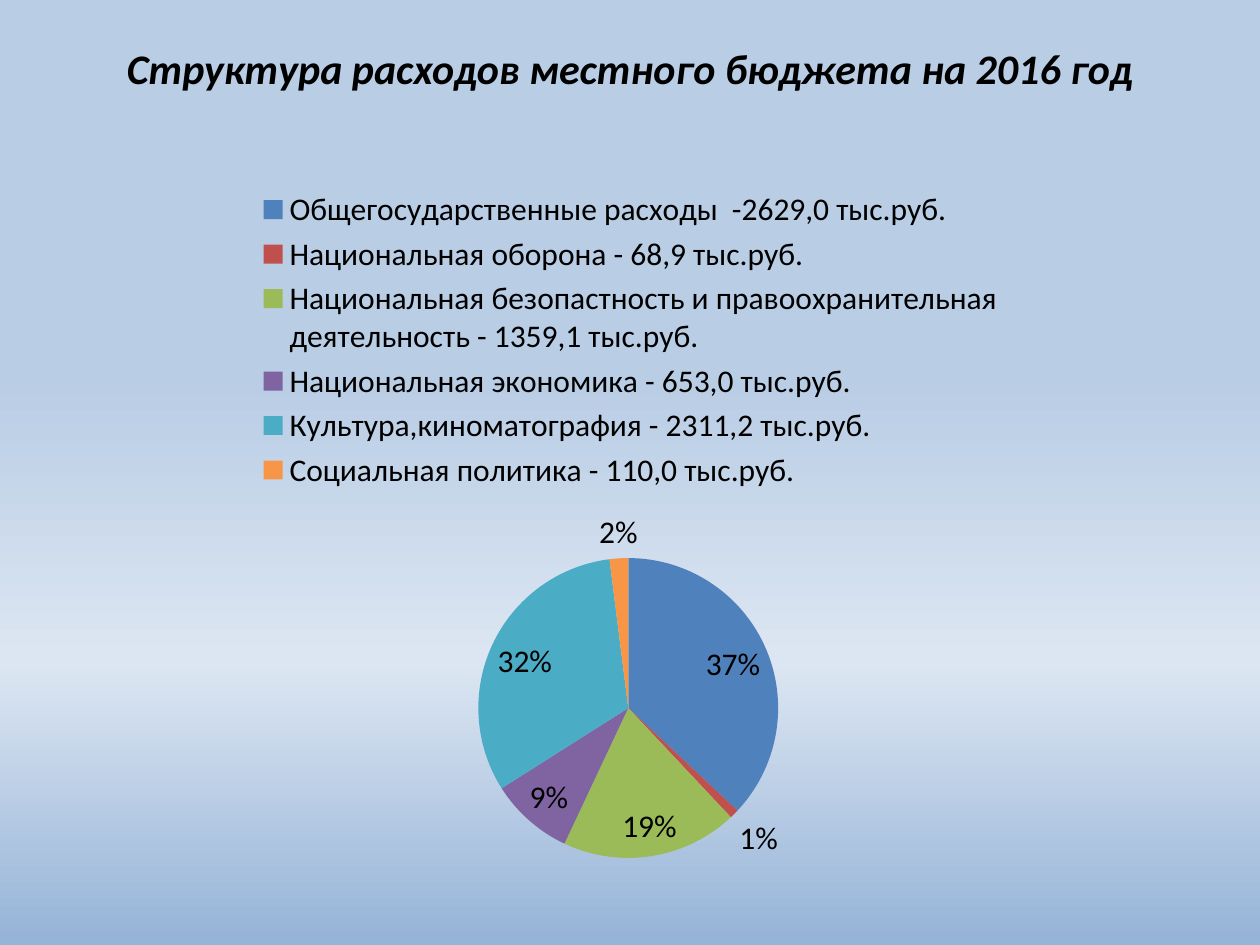
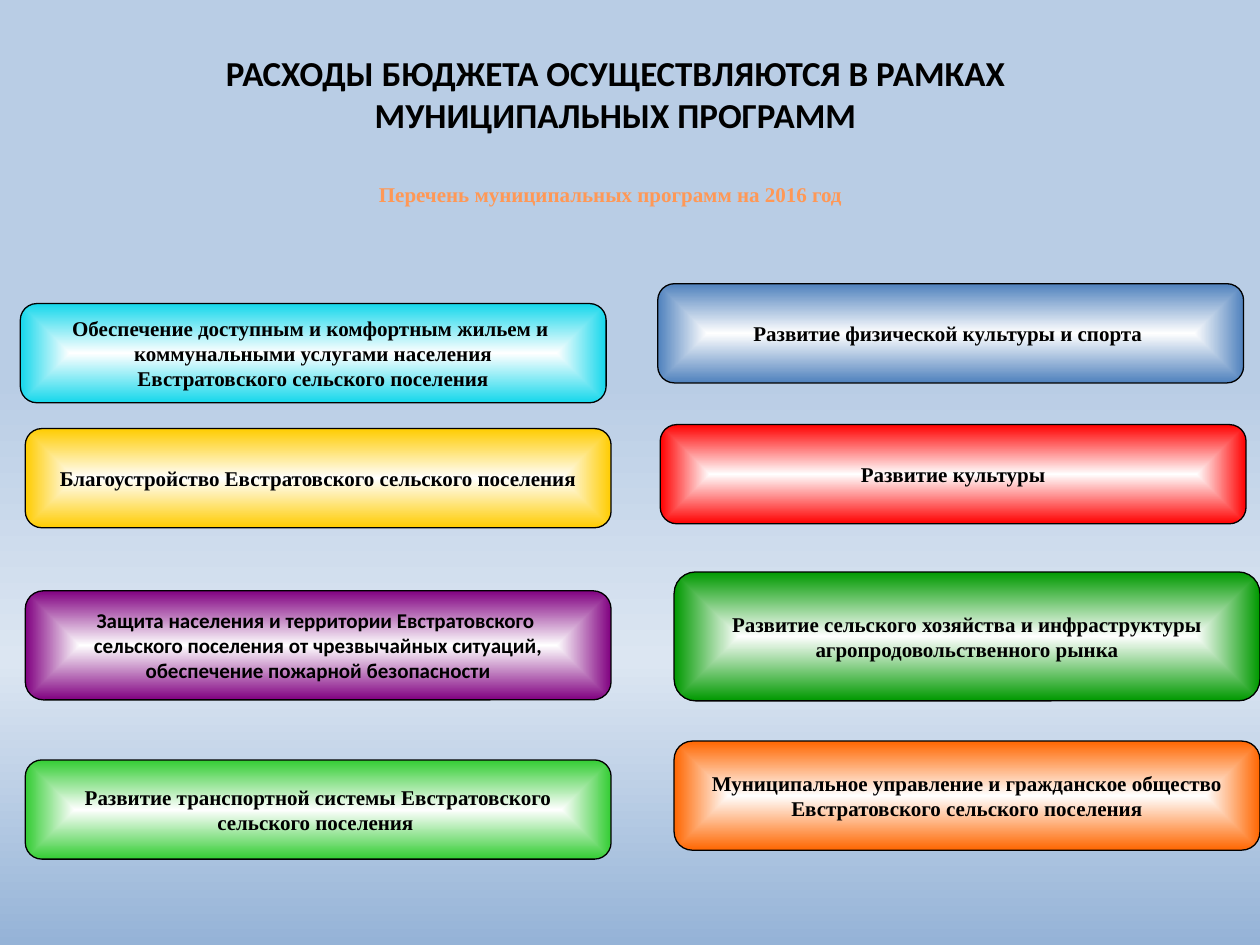
"""Build two slides on the 2016 local budget: spending structure and programmes."""
from dataclasses import dataclass
from typing import NamedTuple

from lxml import etree
from pptx import Presentation, util as u
from pptx.chart.data import CategoryChartData
from pptx.dml.color import RGBColor
from pptx.enum import chart as ch, shapes, text
from pptx.oxml import ns


@dataclass(frozen=True)
class Theme:
    sans: str = "Calibri"
    serif: str = "Times New Roman"
    ink: str = "000000"
    glow: str = "FFFFFF"
    title: int = 24
    heading: int = 20
    chart: int = 18
    body: int = 12
    line: float = 0.75
    corner: float = 0.167
    sky: tuple = ((0, "B9CDE5"), (40, "B9CDE5"), (70, "DCE6F2"), (100, "95B3D7"))
    sunset: tuple = ((0, "9D4700"), (78, "FF9856"), (100, "FFF5F1"))


THEME = Theme()


class Box(NamedTuple):
    left: float
    top: float
    width: float
    height: float


class Expense(NamedTuple):
    label: str
    share: int
    color: str


class Programme(NamedTuple):
    left: float
    top: float
    color: str
    lines: tuple
    height: float = 2.0
    font: str = THEME.serif


PROGRAMME_WIDTH = 11.81

EXPENSES = (
    Expense("Общегосударственные расходы  -2629,0 тыс.руб.", 37, "4F81BD"),
    Expense("Национальная оборона - 68,9 тыс.руб.", 1, "C0504D"),
    Expense("Национальная безопастность и правоохранительная деятельность"
            " - 1359,1 тыс.руб.", 19, "9BBB59"),
    Expense("Национальная экономика - 653,0 тыс.руб.", 9, "8064A2"),
    Expense("Культура,киноматография - 2311,2 тыс.руб.", 32, "4BACC6"),
    Expense("Социальная политика - 110,0 тыс.руб.", 2, "F79646"),
)

PROGRAMMES = (
    Programme(13.26, 5.72, "4F81BD", ("Развитие физической культуры и спорта ",)),
    Programme(0.41, 6.12, "15D7EB", (
        "Обеспечение доступным и комфортным жильем и ",
        "коммунальными услугами населения",
        "Евстратовского сельского поселения")),
    Programme(0.51, 11.91, "800080", (
        "Защита населения и территории Евстратовского ",
        "сельского поселения от чрезвычайных ситуаций,",
        "обеспечение пожарной безопасности"), 2.2, THEME.sans),
    Programme(13.59, 11.53, "009900", (
        "Развитие сельского хозяйства и инфраструктуры"
        " агропродовольственного рынка",), 2.6),
    Programme(0.51, 8.64, "FFCC00", (
        "Благоустройство Евстратовского сельского поселения",)),
    Programme(13.31, 8.56, "FF0000", ("Развитие культуры",)),
    Programme(0.51, 15.32, "33CC33", (
        "Развитие транспортной системы Евстратовского сельского поселения ",)),
    Programme(13.59, 14.94, "FF6600", (
        "Муниципальное управление и гражданское общество"
        " Евстратовского сельского поселения",), 2.2),
)


def place(box: Box) -> tuple:
    """Return a box as four lengths."""
    return tuple(u.Cm(value) for value in box)


def paint_gradient(fill, owner, stops: tuple, from_center: bool = False) -> None:
    """Fill the owner element with a downward or centred gradient."""
    fill.gradient()
    grad = next(owner.iter(ns.qn("a:gradFill")))
    for child in list(grad):
        grad.remove(child)
    stop_list = etree.SubElement(grad, ns.qn("a:gsLst"))
    for position, color in stops:
        stop = etree.SubElement(stop_list, ns.qn("a:gs"), {"pos": str(position * 1000)})
        etree.SubElement(stop, ns.qn("a:srgbClr"), {"val": color})
    if from_center:
        shade = etree.SubElement(grad, ns.qn("a:path"), {"path": "shape"})
        etree.SubElement(shade, ns.qn("a:fillToRect"), dict.fromkeys("ltrb", "50000"))
    else:
        etree.SubElement(grad, ns.qn("a:lin"), {"ang": "5400000", "scaled": "0"})


def write_lines(tf, lines: tuple, font: str, size: int, italic: bool = False) -> None:
    """Write centred bold paragraphs into a text frame."""
    tf.word_wrap = True
    for i, line in enumerate(lines):
        p = tf.add_paragraph() if i else tf.paragraphs[0]
        p.alignment = text.PP_ALIGN.CENTER
        r = p.add_run()
        r.text = line
        r.font.name, r.font.size = font, u.Pt(size)
        r.font.bold, r.font.italic = True, italic
        r.font.color.rgb = RGBColor.from_string(THEME.ink)


def add_caption(slide, box: Box, caption: str, font: str, size: int, italic: bool = False):
    """Add a centred caption and return its run."""
    tf = slide.shapes.add_textbox(*place(box)).text_frame
    write_lines(tf, (caption,), font, size, italic)
    return tf.paragraphs[0].runs[0]


def add_programme(slide, programme: Programme) -> None:
    """Draw one programme as a glowing rounded plate."""
    box = Box(programme.left, programme.top, PROGRAMME_WIDTH, programme.height)
    sp = slide.shapes.add_shape(shapes.MSO_SHAPE.ROUNDED_RECTANGLE, *place(box))
    sp.adjustments[0] = THEME.corner
    sp.shadow.inherit = False
    stops = ((0, THEME.glow), (100, programme.color))
    paint_gradient(sp.fill, sp.element, stops, from_center=True)
    sp.line.color.rgb = RGBColor.from_string(THEME.ink)
    sp.line.width = u.Pt(THEME.line)
    sp.text_frame.vertical_anchor = text.MSO_ANCHOR.MIDDLE
    write_lines(sp.text_frame, programme.lines, programme.font, THEME.body)


def add_expense_pie(slide, box: Box) -> None:
    """Draw the pie of expense shares with its legend on top."""
    data = CategoryChartData()
    data.categories = [expense.label for expense in EXPENSES]
    data.add_series("Series 1", [expense.share for expense in EXPENSES])
    chart = slide.shapes.add_chart(ch.XL_CHART_TYPE.PIE, *place(box), data).chart
    chart.has_title = False
    chart.font.name, chart.font.size = THEME.sans, u.Pt(THEME.chart)
    chart.font.color.rgb = RGBColor.from_string(THEME.ink)
    chart.has_legend = True
    chart.legend.position = ch.XL_LEGEND_POSITION.TOP
    chart.legend.include_in_layout = False
    plot = chart.plots[0]
    plot.vary_by_categories = True
    plot.has_data_labels = True
    labels = plot.data_labels
    labels.show_percentage, labels.show_value = True, False
    labels.number_format, labels.number_format_is_linked = "0%", False
    labels.position = ch.XL_LABEL_POSITION.BEST_FIT
    for i, expense in enumerate(EXPENSES):
        fill = plot.series[0].points[i].format.fill
        fill.solid()
        fill.fore_color.rgb = RGBColor.from_string(expense.color)


def build_structure(slide) -> None:
    """Build the slide on the structure of expenses."""
    add_caption(slide, Box(0, 0.74, 25.4, 1.4),
                "Структура расходов местного бюджета на 2016 год",
                THEME.sans, THEME.title, italic=True)
    add_expense_pie(slide, Box(4.24, 3.53, 16.94, 15.01))


def build_programmes(slide) -> None:
    """Build the slide on municipal programmes."""
    for programme in PROGRAMMES:
        add_programme(slide, programme)
    r = add_caption(slide, Box(2.01, 3.53, 20.6, 1.19),
                    "Перечень муниципальных программ на 2016 год",
                    THEME.serif, THEME.body)
    paint_gradient(r.font.fill, r.font._element, THEME.sunset)
    add_caption(slide, Box(1.5, 0.91, 21.82, 1.96),
                "РАСХОДЫ БЮДЖЕТА ОСУЩЕСТВЛЯЮТСЯ В РАМКАХ МУНИЦИПАЛЬНЫХ ПРОГРАММ",
                THEME.sans, THEME.heading)


def main() -> None:
    """Build and save the presentation."""
    prs = Presentation()
    prs.slide_width, prs.slide_height = u.Cm(25.4), u.Cm(19.05)
    master = prs.slide_master
    paint_gradient(master.background.fill, master.element, THEME.sky)
    for build in (build_structure, build_programmes):
        build(prs.slides.add_slide(prs.slide_layouts[6]))
    prs.save("out.pptx")


if __name__ == "__main__":
    main()
